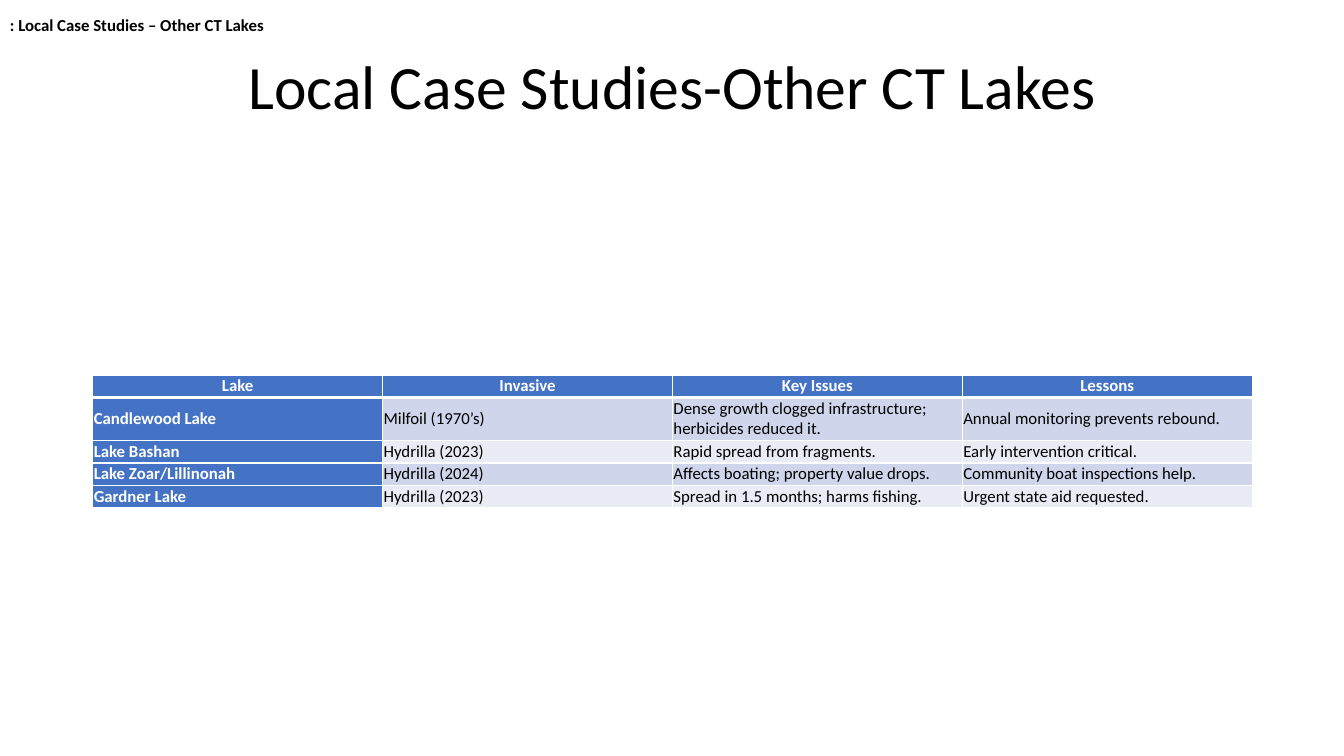
from lxml import etree
from pptx import Presentation
from pptx.dml.color import RGBColor
from pptx.enum.text import MSO_ANCHOR, PP_ALIGN
from pptx.oxml.ns import qn
from pptx.util import Inches, Pt

MIDDLE = MSO_ANCHOR.MIDDLE
LEFT, CENTER = PP_ALIGN.LEFT, PP_ALIGN.CENTER
BLACK, WHITE, BLUE = "000000", "FFFFFF", "4472C4"
BANDS = ["CFD5EA", "E9EBF5"]
MARGINS = ["margin_left", "margin_right", "margin_top", "margin_bottom"]
HEIGHTS = [0.22, 0.42, 0.22, 0.22, 0.22]
LAKES = [
    ["Lake", "Invasive", "Key Issues", "Lessons"],
    ["Candlewood Lake", "Milfoil (1970’s)",
     "Dense growth clogged infrastructure; herbicides reduced it.",
     "Annual monitoring prevents rebound."],
    ["Lake Bashan", "Hydrilla (2023)", "Rapid spread from fragments.",
     "Early intervention critical."],
    ["Lake Zoar/Lillinonah", "Hydrilla (2024)",
     "Affects boating; property value drops.",
     "Community boat inspections help."],
    ["Gardner Lake", "Hydrilla (2023)",
     "Spread in 1.5 months; harms fishing.", "Urgent state aid requested."],
]


def rgb(code):
    return RGBColor.from_string(code)


def write(frame, text, size, color=BLACK, bold=False, align=LEFT):
    """Fill a text frame with one formatted paragraph and return it."""
    para = frame.paragraphs[0]
    para.alignment = align
    run = para.add_run()
    run.text = text
    look = {"name": "Calibri", "size": Pt(size), "bold": bold}
    for key, value in look.items():
        setattr(run.font, key, value)
    run.font.color.rgb = rgb(color)
    return para


def place(shape, *box):
    for key, value in zip(["left", "top", "width", "height"], box):
        setattr(shape, key, Inches(value))


def edge(cell, side, width):
    """Add a white border; must come before the cell's fill."""
    props = cell._tc.get_or_add_tcPr()
    line = etree.SubElement(props, qn("a:ln" + side), w=str(Pt(width)))
    fill = etree.SubElement(line, qn("a:solidFill"))
    etree.SubElement(fill, qn("a:srgbClr"), val=WHITE)


def add_title(slide, text):
    title = slide.shapes.title
    place(title, 0.92, 0.4, 11.5, 0.97)
    title.text_frame.vertical_anchor = MIDDLE
    para = write(title.text_frame, text, 44, align=CENTER)
    para.line_spacing = 0.9


def add_label(slide, text):
    box = slide.shapes.add_textbox(0, 0, Inches(13.33), Inches(0.5))
    box.text_frame.word_wrap = True
    box.text_frame.vertical_anchor = MIDDLE
    write(box.text_frame, text, 12, bold=True)


def fill_cell(cell, text, row, col):
    head = row == 0
    strong = head or col == 0
    for side in "LRTB":
        thick = (row, side) in [(0, "B"), (1, "T")]
        edge(cell, side, 3 if thick else 1)
    cell.fill.solid()
    cell.fill.fore_color.rgb = rgb(BLUE if strong else BANDS[(row - 1) % 2])
    cell.vertical_anchor = MIDDLE
    for key in MARGINS:
        setattr(cell, key, Inches(0.01))
    write(cell.text_frame, text, 12, WHITE if strong else BLACK, strong,
          CENTER if head else LEFT)


def add_grid(slide, rows):
    frame = slide.shapes.add_table(
        len(rows), len(rows[0]), Inches(0.92), Inches(3.72),
        Inches(11.5), Inches(sum(HEIGHTS)))
    table = frame.table
    table.first_col = True
    for row, texts in enumerate(rows):
        table.rows[row].height = Inches(HEIGHTS[row])
        for col, text in enumerate(texts):
            fill_cell(table.cell(row, col), text, row, col)


def main():
    deck = Presentation()
    deck.slide_width, deck.slide_height = Inches(13.33), Inches(7.5)
    slide = deck.slides.add_slide(deck.slide_layouts[5])
    add_title(slide, "Local Case Studies-Other CT Lakes")
    add_grid(slide, LAKES)
    add_label(slide, ": Local Case Studies – Other CT Lakes")
    deck.save("out.pptx")


if __name__ == "__main__":
    main()
